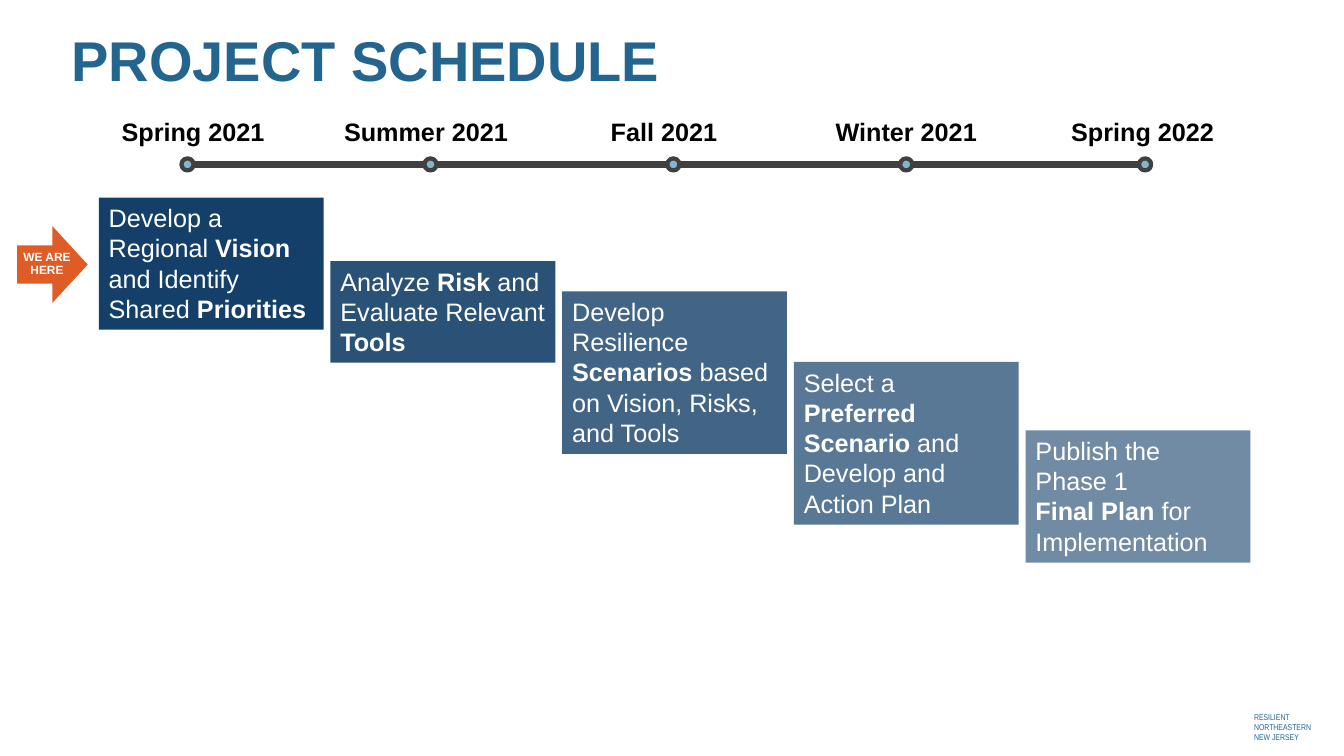
from dataclasses import dataclass

from lxml import etree
from pptx import Presentation
from pptx import util as u
from pptx.dml.color import RGBColor
from pptx.enum import shapes, text
from pptx.oxml.ns import qn

HUES = {
    "title": "24658F",
    "card": "133F68",
    "line": "404040",
    "dot": "83B5CD",
    "arrow": "DF5C26",
    "white": "FFFFFF",
    "black": "000000",
}
WIDTH, HEIGHT = u.Inches(13.33), u.Inches(7.5)
AXIS = 21.75  # row of the timeline
CARD_LEFT, CARD_STEP, CARD_WIDTH = 7.35, 17.24, 16.73
PAD_ROWS, LINE_ROWS = 1.33, 4.04  # card height: both insets plus its lines


@dataclass
class Phase:
    season: str
    label: float  # column of the label's centre
    dot: float  # column of the dot's centre
    top: float  # row of the card's top
    lines: int
    task: list[str]  # paragraphs, with bold words between asterisks


PHASES = [
    Phase("Spring 2021", 14.37, 13.95, 26.13, 4,
          ["Develop a Regional *Vision* and Identify Shared *Priorities*"]),
    Phase("Summer 2021", 31.7, 32.03, 34.53, 3,
          ["Analyze *Risk* and Evaluate Relevant *Tools*"]),
    Phase("Fall 2021", 49.4, 50.1, 38.53, 5,
          ["Develop Resilience *Scenarios* based on Vision, Risks, and Tools"]),
    Phase("Winter 2021", 67.43, 67.43, 47.87, 5,
          ["Select a *Preferred Scenario* and Develop and Action Plan"]),
    Phase("Spring 2022", 85.02, 85.2, 56.93, 4,
          ["Publish the", "Phase 1", "*Final Plan *for Implementation"]),
]


def col(share: float) -> int:
    """Turn hundredths of the slide's width into a length."""
    return round(WIDTH * share / 100)


def row(share: float) -> int:
    """Turn hundredths of the slide's height into a length."""
    return round(HEIGHT * share / 100)


def hue(name: str) -> RGBColor:
    return RGBColor.from_string(HUES[name])


def style(para, size: float, name: str, bold=None, face: str = "Arial") -> None:
    para.font.size = u.Pt(size)
    para.font.name = face
    para.font.bold = bold
    para.font.color.rgb = hue(name)


def add_box(slide, left: float, top: float, width: float, height: float, words: str):
    """Add a wrapped text box and return its frame."""
    frame = slide.shapes.add_textbox(
        col(left), row(top), col(width), row(height)).text_frame
    frame.word_wrap = True
    frame.text = words
    return frame


def add_solid(slide, kind, left: int, top: int, width: int, height: int, name: str):
    """Add a preset shape with a plain fill and no outline."""
    shape = slide.shapes.add_shape(kind, left, top, width, height)
    shape.shadow.inherit = False
    shape.fill.solid()
    shape.fill.fore_color.rgb = hue(name)
    shape.line.fill.background()
    return shape


def add_title(slide) -> None:
    title = slide.shapes.title
    title.left, title.top = col(5.33), row(5.07)
    title.width, title.height = col(88.2), row(6.53)
    frame = title.text_frame
    frame.text = "PROJECT SCHEDULE"
    frame.word_wrap = True
    frame.vertical_anchor = text.MSO_ANCHOR.MIDDLE
    frame.margin_left = frame.margin_right = 0
    frame.margin_top = frame.margin_bottom = 0
    para = frame.paragraphs[0]
    para.alignment = text.PP_ALIGN.LEFT
    para.line_spacing = 0.9
    style(para, 40, "title", True)


def add_marker(slide) -> None:
    """Point an arrow at the current phase."""
    add_solid(slide, shapes.MSO_SHAPE.RIGHT_ARROW,
              col(1.28), row(29.93), col(5.25), row(10.13), "arrow")
    frame = add_box(slide, 1.5, 33.2, 4.73, 5.33, "WE ARE HERE")
    frame.margin_left = frame.margin_top = frame.margin_bottom = 0
    para = frame.paragraphs[0]
    para.alignment = text.PP_ALIGN.CENTER
    para.line_spacing = 0.9
    style(para, 8.5, "white", True)


def add_axis(slide) -> None:
    line = slide.shapes.add_connector(
        shapes.MSO_CONNECTOR.STRAIGHT,
        col(PHASES[0].dot), row(AXIS), col(PHASES[-1].dot), row(AXIS))
    line.line.color.rgb = hue("line")
    line.line.width = u.Pt(4.5)
    etree.SubElement(line._element.spPr, qn("a:effectLst"))


def add_dot(slide, phase: Phase) -> None:
    size = col(0.9)
    dot = add_solid(slide, shapes.MSO_SHAPE.OVAL, col(phase.dot) - size // 2,
                    row(AXIS) - size // 2, size, size, "dot")
    dot.line.color.rgb = hue("line")
    dot.line.width = u.Pt(3)


def add_label(slide, phase: Phase) -> None:
    frame = add_box(slide, phase.label - CARD_WIDTH / 2, 14.75,
                    CARD_WIDTH, 5.33, phase.season)
    para = frame.paragraphs[0]
    para.alignment = text.PP_ALIGN.CENTER
    style(para, 18, "black", True)


def add_card(slide, phase: Phase, place: int) -> None:
    card = add_solid(slide, shapes.MSO_SHAPE.RECTANGLE,
                     col(CARD_LEFT + place * CARD_STEP), row(phase.top),
                     col(CARD_WIDTH), row(PAD_ROWS + LINE_ROWS * phase.lines), "card")
    if place:
        tint = card.fill._xPr.find(".//" + qn("a:srgbClr"))
        etree.SubElement(tint, qn("a:alpha"), val=str(100000 - 10000 * place))
    frame = card.text_frame
    frame.word_wrap = True
    frame.vertical_anchor = text.MSO_ANCHOR.TOP
    for spot, words in enumerate(phase.task):
        para = frame.add_paragraph() if spot else frame.paragraphs[0]
        para.alignment = text.PP_ALIGN.LEFT
        style(para, 18, "white")
        for part, piece in enumerate(words.split("*")):
            if piece:
                run = para.add_run()
                run.text = piece
                run.font.bold = part % 2 == 1


def add_footer(slide) -> None:
    frame = add_box(slide, 92.57, 93.47, 6.23, 5.33,
                    "RESILIENT NORTHEASTERN NEW JERSEY")
    style(frame.paragraphs[0], 6, "title", face="Arial Narrow")


def main() -> None:
    deck = Presentation()
    deck.slide_width, deck.slide_height = WIDTH, HEIGHT
    slide = deck.slides.add_slide(deck.slide_layouts.get_by_name("Title Only"))
    add_footer(slide)
    add_title(slide)
    add_marker(slide)
    add_axis(slide)
    for place, phase in enumerate(PHASES):
        add_dot(slide, phase)
        add_label(slide, phase)
        add_card(slide, phase, place)
    deck.save("out.pptx")


if __name__ == "__main__":
    main()
